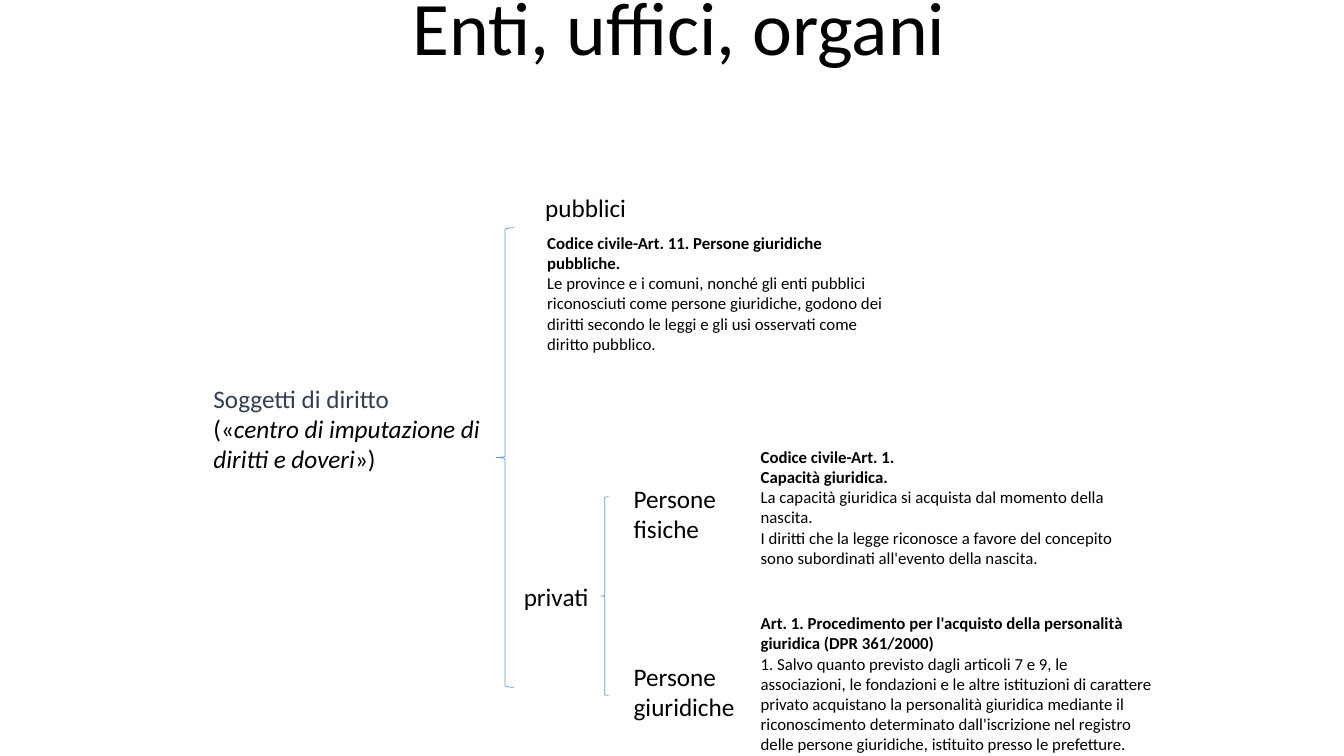
from pptx import Presentation
from pptx.dml.color import RGBColor
from pptx.enum.shapes import MSO_SHAPE
from pptx.enum.text import MSO_ANCHOR, MSO_AUTO_SIZE, PP_ALIGN
from pptx.util import Cm, Pt

BLACK = RGBColor(0x00, 0x00, 0x00)
SLATE = RGBColor(0x33, 0x3F, 0x50)
BLUE = RGBColor(0x5B, 0x9B, 0xD5)
BRACE = MSO_SHAPE.LEFT_BRACE
BOTTOM = MSO_ANCHOR.BOTTOM
CENTER = PP_ALIGN.CENTER
NO_FIT = MSO_AUTO_SIZE.NONE
GROW = MSO_AUTO_SIZE.SHAPE_TO_FIT_TEXT


def write(p, text, size=18, color=BLACK, bold=False, italic=False):
    """Add text to a paragraph; a newline becomes a line break."""
    for i, line in enumerate(text.split("\n")):
        if i:
            p.add_line_break()
        r = p.add_run()
        r.text = line
        r.font.name = "Calibri"
        r.font.size = Pt(size)
        r.font.color.rgb = color
        r.font.bold = bold
        r.font.italic = italic


def add_box(left, top, width, height):
    tf = s.shapes.add_textbox(Cm(left), Cm(top), Cm(width), Cm(height)).text_frame
    tf.word_wrap = True
    tf.auto_size = GROW
    return tf


prs = Presentation()
prs.slide_width, prs.slide_height = Cm(33.87), Cm(19.05)
s = prs.slides.add_slide(prs.slide_layouts[5])

# Title
title = s.shapes.title
title.left, title.top, title.width, title.height = Cm(6.32), Cm(0.74), Cm(21.59), Cm(1.19)
tf = title.text_frame
tf.word_wrap = True
tf.auto_size = NO_FIT
tf.vertical_anchor = BOTTOM
p = tf.paragraphs[0]
p.alignment = CENTER
p.line_spacing = 0.9
write(p, "Enti, uffici, organi", size=54)

# Root of the tree
tf = add_box(5.13, 9.53, 7.39, 2.57)
write(tf.paragraphs[0], "Soggetti di diritto", color=SLATE)
p = tf.add_paragraph()
write(p, "(«")
write(p, "centro di imputazione di diritti e doveri", italic=True)
write(p, "»)")

# Braces that open each branching
for left, top, width, height in [(12.5, 5.74, 0.46, 11.58), (15.14, 12.52, 0.2, 5)]:
    brace = s.shapes.add_shape(BRACE, Cm(left), Cm(top), Cm(width), Cm(height))
    brace.shadow.inherit = False
    brace.fill.background()
    brace.line.color.rgb = BLUE
    brace.line.width = Pt(0.5)

# Branch labels
labels = [
    ("pubblici", 13.49, 4.72, 3.2, 1.02),
    ("privati", 12.95, 14.53, 4.39, 1.02),
    ("Persone fisiche", 15.72, 12.06, 3, 1.8),
    ("Persone giuridiche", 15.72, 16.54, 3.61, 1.8),
]
for text, *place in labels:
    write(add_box(*place).paragraphs[0], text)

# Articles of law: bold heading, then body paragraphs
articles = [
    ((13.54, 5.74, 8.99, 4.11), "Codice civile-Art. 11. Persone giuridiche pubbliche.", [
        "Le province e i comuni, nonché gli enti pubblici riconosciuti come persone "
        "giuridiche, godono dei diritti secondo le leggi e gli usi osservati come "
        "diritto pubblico.",
    ]),
    ((18.92, 11.13, 10.21, 4.11), "Codice civile-Art. 1.\nCapacità giuridica.", [
        "La capacità giuridica si acquista dal momento della nascita.",
        "I diritti che la legge riconosce a favore del concepito sono subordinati "
        "all'evento della nascita.",
    ]),
    ((18.92, 15.32, 10.39, 4.62),
     "Art. 1. Procedimento per l'acquisto della personalità giuridica (DPR 361/2000)", [
        "1. Salvo quanto previsto dagli articoli 7 e 9, le associazioni, le fondazioni e "
        "le altre istituzioni di carattere privato acquistano la personalità giuridica "
        "mediante il riconoscimento determinato dall'iscrizione nel registro delle "
        "persone giuridiche, istituito presso le prefetture.",
    ]),
]
for place, heading, body in articles:
    tf = add_box(*place)
    write(tf.paragraphs[0], heading, size=12, bold=True)
    for text in body:
        write(tf.add_paragraph(), text, size=12)

prs.save("out.pptx")
